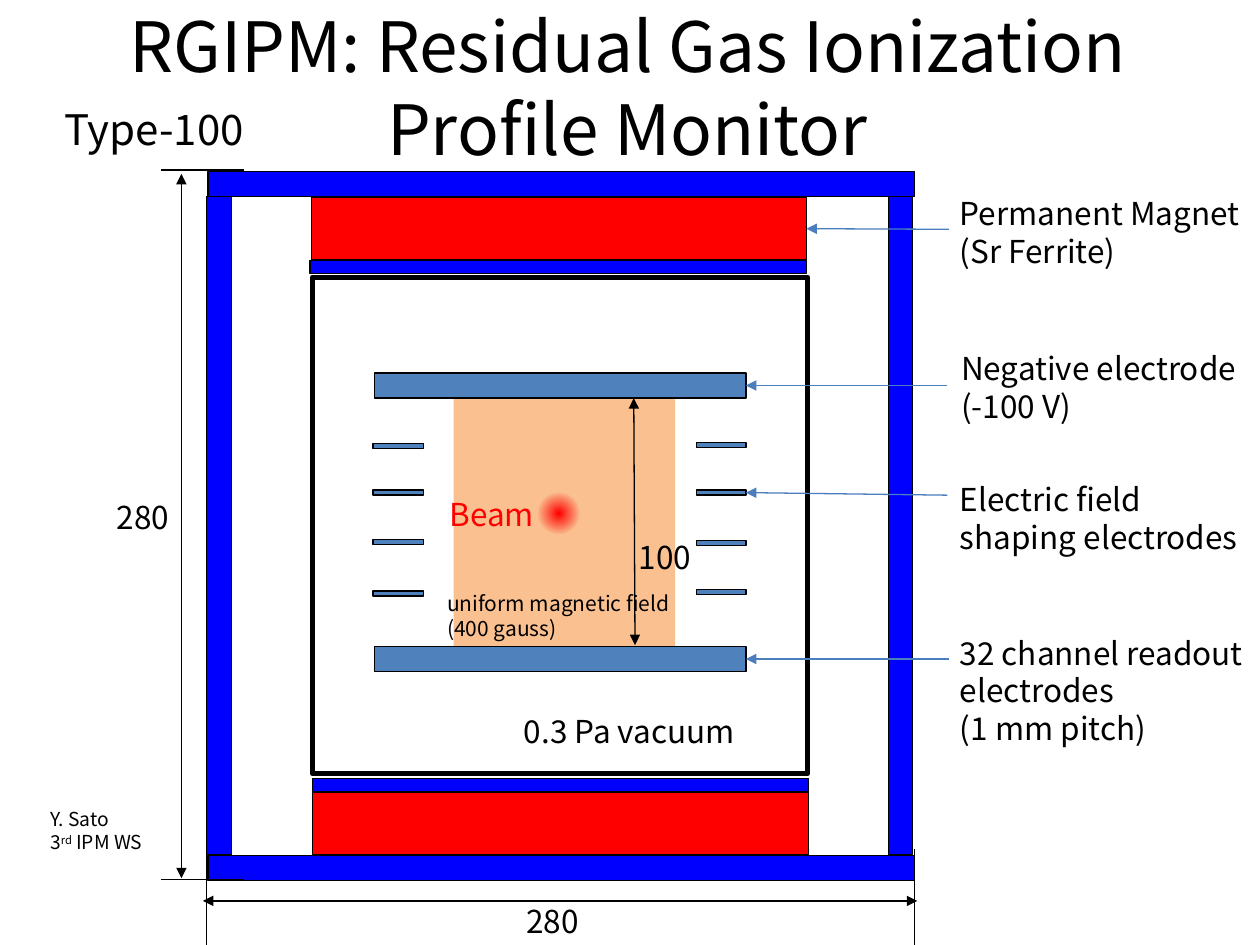
"""Draw the layout of a residual gas ionization profile monitor."""
from dataclasses import dataclass
from typing import Any, Optional

from lxml import etree
from pptx import Presentation
from pptx.dml.color import RGBColor
from pptx.enum.shapes import MSO_CONNECTOR, MSO_SHAPE
from pptx.enum.text import MSO_ANCHOR, MSO_AUTO_SIZE, PP_ALIGN
from pptx.oxml.ns import qn
from pptx.util import Inches, Pt

RECT, OVAL = MSO_SHAPE.RECTANGLE, MSO_SHAPE.OVAL
STRAIGHT = MSO_CONNECTOR.STRAIGHT
NONE, GROW = MSO_AUTO_SIZE.NONE, MSO_AUTO_SIZE.SHAPE_TO_FIT_TEXT
MIDDLE, CENTER = MSO_ANCHOR.MIDDLE, PP_ALIGN.CENTER
WIDE, HIGH = Inches(10), Inches(7.5)
CELL = WIDE / 100
RIGHT = 3


@dataclass(frozen=True)
class Theme:
    """Colours, font and type sizes."""
    ink: str = "000000"
    yoke: str = "0000FF"
    hot: str = "FF0000"
    plate: str = "4F81BD"
    glow: str = "FAC090"
    lead: str = "4B7EBC"
    font: str = "Noto Sans CJK JP"
    head: float = 39.6
    type: float = 24
    body: float = 18
    note: float = 12
    small: float = 11
    thin: float = 0.75
    thick: float = 3


@dataclass(frozen=True)
class Box:
    """A rectangle in grid columns and rows."""
    x: float
    y: float
    w: float
    h: float
    fill: Optional[str] = None
    edge: float = 0


@dataclass(frozen=True)
class Label:
    """Text at a grid place, with raised parts between carets."""
    text: str
    x: float
    y: float
    w: float
    h: float
    size: float = 18
    color: str = "000000"
    wrap: bool = False


@dataclass(frozen=True)
class Rule:
    """A straight line between two grid points."""
    x: float
    y: float
    to_x: float
    to_y: float
    arrows: tuple = ()
    color: str = "000000"


LOOK = Theme()
BOTH, END = ("headEnd", "tailEnd"), ("tailEnd",)


def grid(*cells: float) -> list[int]:
    """Turn grid counts into lengths."""
    return [round(cell * CELL) for cell in cells]


def tint(color: str) -> RGBColor:
    """Read a colour."""
    return RGBColor.from_string(color)


def apply(item: Any, values: dict) -> None:
    """Set each format value on an item."""
    for name, value in values.items():
        setattr(item, name, value)


def draw_box(slide: Any, box: Box, kind: Any = RECT) -> Any:
    """Draw a filled or outlined shape."""
    shape = slide.shapes.add_shape(kind, *grid(box.x, box.y, box.w, box.h))
    shape.shadow.inherit = False
    if box.fill:
        shape.fill.solid()
        shape.fill.fore_color.rgb = tint(box.fill)
    else:
        shape.fill.background()
    if box.edge:
        shape.line.color.rgb = tint(LOOK.ink)
        shape.line.width = Pt(box.edge)
    else:
        shape.line.fill.background()
    return shape


def draw_rule(slide: Any, rule: Rule) -> Any:
    """Draw a line with its arrowheads."""
    line = slide.shapes.add_connector(
        STRAIGHT, *grid(rule.x, rule.y, rule.to_x, rule.to_y))
    line.line.color.rgb = tint(rule.color)
    line.line.width = Pt(LOOK.thin)
    stroke = line.line._get_or_add_ln()
    for end in rule.arrows:
        etree.SubElement(stroke, qn(f"a:{end}"), type="triangle")
    etree.SubElement(line._element.spPr, qn("a:effectLst"))
    return line


def draw_label(slide: Any, label: Label) -> None:
    """Write a text box."""
    box = slide.shapes.add_textbox(*grid(label.x, label.y, label.w, label.h))
    frame = box.text_frame
    apply(frame, {"word_wrap": label.wrap, "auto_size": GROW})
    for row, words in enumerate(label.text.split("\n")):
        para = frame.add_paragraph() if row else frame.paragraphs[0]
        for turn, part in enumerate(words.split("^")):
            run = para.add_run()
            run.text = part
            apply(run.font, {"name": LOOK.font, "size": Pt(label.size)})
            run.font.color.rgb = tint(label.color)
            if turn % 2:
                run._r.get_or_add_rPr().set("baseline", "30000")


def draw_title(slide: Any, text: str) -> None:
    """Place and format the title."""
    title = slide.shapes.title
    left, top, width, height = grid(4.8, 0.6, 90, 12.5)
    apply(title, {"left": left, "top": top, "width": width, "height": height})
    frame = title.text_frame
    frame.text = text
    apply(frame, {"auto_size": NONE, "vertical_anchor": MIDDLE,
                  "word_wrap": True})
    para = frame.paragraphs[0]
    para.alignment = CENTER
    apply(para.font, {"name": LOOK.font, "size": Pt(LOOK.head)})
    para.font.color.rgb = tint(LOOK.ink)


def draw_beam(slide: Any) -> None:
    """Draw the beam spot with a round gradient."""
    spot = draw_box(slide, Box(42.7, 39.1, 3.3, 3.3), OVAL)
    fill = etree.Element(qn("a:gradFill"), rotWithShape="1")
    stops = etree.SubElement(fill, qn("a:gsLst"))
    for share, color in ((0, LOOK.hot), (74, LOOK.glow), (100, LOOK.glow)):
        stop = etree.SubElement(stops, qn("a:gs"), pos=str(share * 1000))
        etree.SubElement(stop, qn("a:srgbClr"), val=color)
    form = etree.SubElement(fill, qn("a:path"), path="circle")
    etree.SubElement(form, qn("a:fillToRect"),
                     dict.fromkeys("ltrb", "50000"))
    props = spot._element.spPr
    props.replace(props.find(qn("a:noFill")), fill)


def main() -> None:
    """Build and save the slide."""
    deck = Presentation()
    apply(deck, {"slide_width": WIDE, "slide_height": HIGH})
    slide = deck.slides.add_slide(deck.slide_layouts[5])
    draw_title(slide, "RGIPM: Residual Gas Ionization Profile Monitor")

    thin, yoke, hot, plate = LOOK.thin, LOOK.yoke, LOOK.hot, LOOK.plate
    draw_box(slide, Box(36, 31.6, 17.6, 19.7, LOOK.glow))
    top, base = [draw_box(slide, Box(29.7, y, 29.5, 2, plate, thin))
                 for y in (29.6, 51.3)]
    rungs = [draw_box(slide, Box(x, y, w, 0.4, plate, thin))
             for x, w, rows in ((29.6, 4, (35.2, 38.9, 42.8, 46.9)),
                                (55.3, 3.9, (35.1, 38.9, 42.9, 46.8)))
             for y in rows]
    magnet = draw_box(slide, Box(24.7, 15.7, 39.3, 4.9, hot, thin))
    for box in (Box(24.8, 62.9, 39.4, 4.9, hot, thin),
                Box(24.6, 20.7, 39.4, 1, yoke, thin),
                Box(24.8, 61.8, 39.4, 1, yoke, thin),
                Box(16.5, 67.9, 56.1, 2, yoke, thin),
                Box(16.4, 15.6, 2, 52.2, yoke, thin),
                Box(16.5, 13.6, 56.1, 2, yoke, thin),
                Box(70.5, 15.6, 1.9, 52.2, yoke, thin),
                Box(24.8, 22, 39.3, 39.4, None, LOOK.thick)):
        draw_box(slide, box)

    for rule in (Rule(50.3, 31.6, 50.4, 51.2, BOTH),
                 Rule(16.1, 71.5, 72.8, 71.5, BOTH),
                 Rule(14.4, 13.8, 14.4, 69.7, BOTH),
                 Rule(16.4, 67.3, 16.4, 75), Rule(72.6, 67.4, 72.6, 75),
                 Rule(12.8, 13.5, 19.4, 13.5), Rule(12.8, 69.8, 19.4, 69.8)):
        draw_rule(slide, rule)
    for part, x, y in ((magnet, 75.3, 18.2), (top, 75.2, 30.6),
                       (base, 75.3, 52.3), (rungs[5], 75.2, 39.3)):
        lead = draw_rule(slide, Rule(x, y, x, y, END, LOOK.lead))
        lead.end_connect(part, RIGHT)

    draw_beam(slide)
    for label in (
            Label("100", 49.7, 42.2, 6.7, 4),
            Label("280", 40.8, 71.1, 6.7, 4),
            Label("280", 8.3, 39, 6.7, 4),
            Label("Type-100", 4.1, 7.7, 17.5, 5, LOOK.type),
            Label("Beam", 34.7, 38.8, 9.1, 4, LOOK.body, hot),
            Label("0.3 Pa vacuum", 40.6, 56, 20.3, 4),
            Label("Permanent Magnet\n(Sr Ferrite)", 75.2, 14.9, 25.3, 7.1),
            Label("Negative electrode\n(-100 V)", 75.3, 27.2, 25, 7.1),
            Label("Electric field shaping electrodes",
                  75.2, 37.6, 25.1, 7.1, wrap=True),
            Label("32 channel readout electrodes\n(1 mm pitch)",
                  75.2, 49.8, 25.1, 10.1, wrap=True),
            Label("uniform magnetic field\n(400 gauss)",
                  34.5, 46.4, 20.5, 5, LOOK.note),
            Label("Y. Sato\n3^rd^ IPM WS", 3, 63.6, 10.4, 4.7, LOOK.small)):
        draw_label(slide, label)
    deck.save("out.pptx")


if __name__ == "__main__":
    main()
